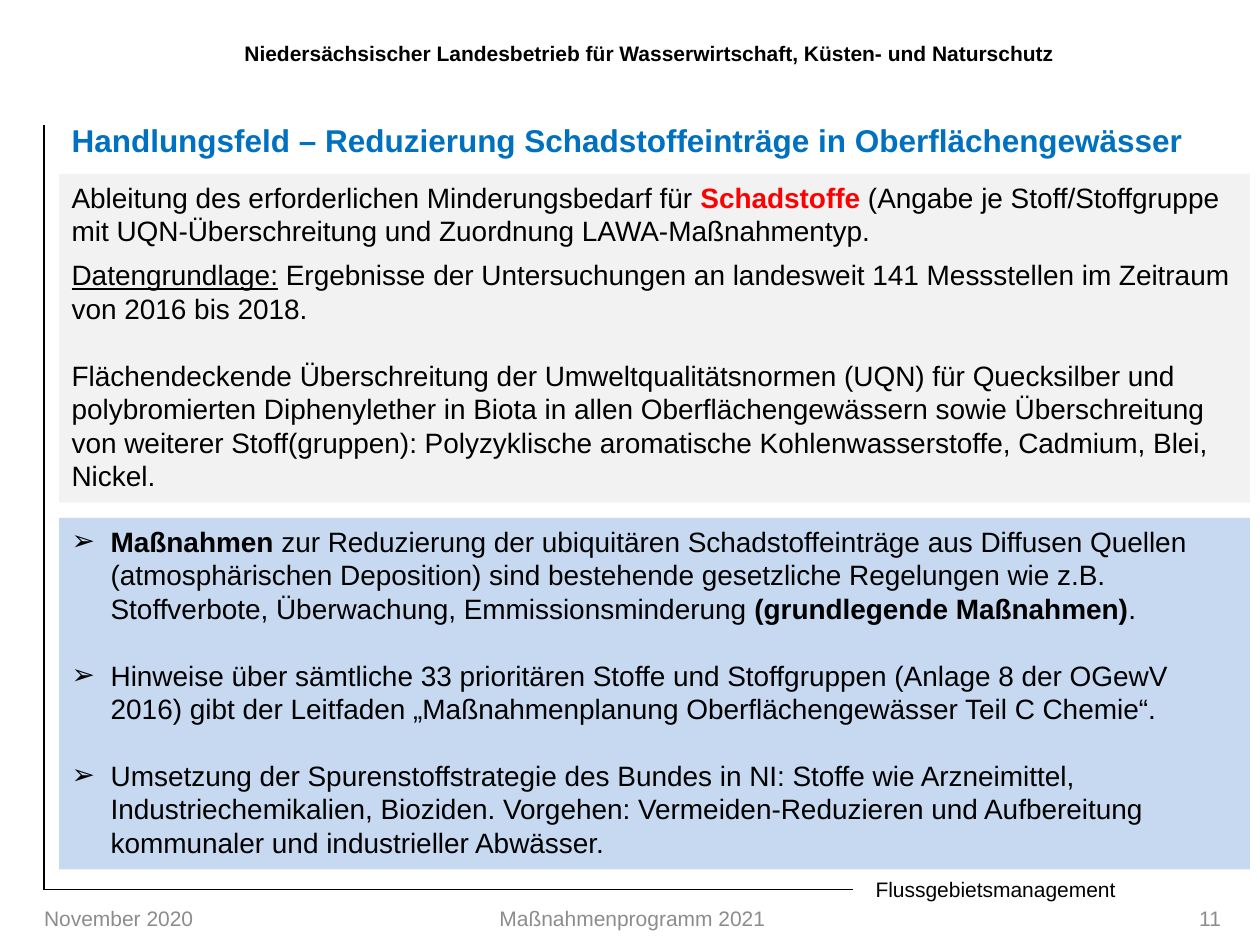
from lxml import etree
from pptx import Presentation
from pptx.dml.color import RGBColor
from pptx.enum.shapes import MSO_CONNECTOR as Connector, MSO_SHAPE as Shape
from pptx.enum.text import MSO_ANCHOR as Anchor, PP_ALIGN as Align
from pptx.oxml.ns import qn
from pptx.util import Inches, Pt

BLACK = RGBColor(0x00, 0x00, 0x00)
GREY = RGBColor(0x8C, 0x8C, 0x8C)
BLUE = RGBColor(0x00, 0x70, 0xC0)
RED = RGBColor(0xFF, 0x00, 0x00)
PALE_GREY = RGBColor(0xF2, 0xF2, 0xF2)
PALE_BLUE = RGBColor(0xC6, 0xD9, 0xF1)

FONT = "Arial"
BODY_SIZE = 16
LINE_GAP = 19  # height of one body line, in points

# Each paragraph is (space after, runs); each run is (text, styles)
FINDINGS = [
    (6, [("Ableitung des erforderlichen Minderungsbedarf für ", {}),
         ("Schadstoffe", {"bold": True, "color": RED}),
         (" (Angabe je Stoff/Stoffgruppe mit UQN-Überschreitung und Zuordnung "
          "LAWA-Maßnahmentyp.", {})]),
    (LINE_GAP, [("Datengrundlage:", {"underline": True}),
                (" ", {"bold": True}),
                ("Ergebnisse der Untersuchungen an landesweit 141 Messstellen im "
                 "Zeitraum von 2016 bis 2018.", {})]),
    (0, [("Flächendeckende Überschreitung der Umweltqualitätsnormen (UQN) für "
          "Quecksilber und polybromierten Diphenylether in Biota in allen "
          "Oberflächengewässern sowie Überschreitung von weiterer Stoff(gruppen): "
          "Polyzyklische aromatische Kohlenwasserstoffe, Cadmium, Blei, Nickel.", {})]),
]
MEASURES = [
    (LINE_GAP, [("Maßnahmen", {"bold": True}),
                (" zur Reduzierung der ubiquitären Schadstoffeinträge aus Diffusen "
                 "Quellen (atmosphärischen Deposition) sind bestehende gesetzliche "
                 "Regelungen wie z.B. Stoffverbote, Überwachung, "
                 "Emmissionsminderung ", {}),
                ("(grundlegende Maßnahmen)", {"bold": True}),
                (".", {})]),
    (LINE_GAP, [("Hinweise über sämtliche 33 prioritären Stoffe und Stoffgruppen "
                 "(Anlage 8 der OGewV 2016) gibt der Leitfaden „Maßnahmenplanung "
                 "Oberflächengewässer Teil C Chemie“.", {})]),
    (0, [("Umsetzung der Spurenstoffstrategie des Bundes in NI: Stoffe wie "
          "Arzneimittel, Industriechemikalien, Bioziden. Vorgehen: "
          "Vermeiden-Reduzieren und Aufbereitung kommunaler und industrieller "
          "Abwässer.", {})]),
]


def add_run(paragraph, text, size, color=BLACK, bold=False, underline=False):
    run = paragraph.add_run()
    run.text = text
    font = run.font
    font.name, font.size, font.bold, font.underline = FONT, Pt(size), bold, underline
    font.color.rgb = color


def add_label(slide, box, text, size=12, color=BLACK, bold=False,
              align=Align.LEFT, anchor=Anchor.TOP, side_inset=0.1):
    frame = slide.shapes.add_textbox(*map(Inches, box)).text_frame
    frame.word_wrap = True
    frame.vertical_anchor = anchor
    frame.margin_left = frame.margin_right = Inches(side_inset)
    paragraph = frame.paragraphs[0]
    paragraph.alignment = align
    add_run(paragraph, text, size, color, bold)


def add_rule(slide, start, end):
    line = slide.shapes.add_connector(
        Connector.STRAIGHT, *map(Inches, start), *map(Inches, end))
    line.line.color.rgb = BLACK
    line.line.width = Pt(0.75)
    etree.SubElement(line._element.spPr, qn("a:effectLst"))


def add_arrow_bullet(paragraph):
    indent = Inches(0.31)
    properties = paragraph._p.get_or_add_pPr()
    properties.set("marL", str(indent))
    properties.set("indent", str(-indent))
    etree.SubElement(properties, qn("a:buFont")).set("typeface", FONT)
    etree.SubElement(properties, qn("a:buChar")).set("char", "➢")


def add_panel(slide, box, fill, content, bulleted=False):
    panel = slide.shapes.add_shape(Shape.RECTANGLE, *map(Inches, box))
    panel.shadow.inherit = False
    panel.fill.solid()
    panel.fill.fore_color.rgb = fill
    panel.line.fill.background()
    frame = panel.text_frame
    frame.word_wrap = True
    frame.vertical_anchor = Anchor.TOP
    for index, (space_after, runs) in enumerate(content):
        paragraph = frame.add_paragraph() if index else frame.paragraphs[0]
        if bulleted:
            add_arrow_bullet(paragraph)
        paragraph.alignment = Align.LEFT
        paragraph.space_after = Pt(space_after)
        for text, styles in runs:
            add_run(paragraph, text, BODY_SIZE, **styles)


def add_frame(slide, left, top, right, bottom):
    # Corner rules with the department name at the end of the lower one
    add_rule(slide, (right, bottom), (left, bottom))
    add_rule(slide, (left, bottom), (left, top))
    add_label(slide, (right + 0.08, bottom - 0.15, 2.21, 0.3), "Flussgebietsmanagement")


def add_footer(slide, left, top, width, height):
    # Date, programme and page number share the same strip
    for text, align in (("November 2020", Align.LEFT),
                        ("Maßnahmenprogramm 2021", Align.CENTER),
                        ("11", Align.RIGHT)):
        part = width / 3
        offset = {Align.LEFT: 0, Align.CENTER: part, Align.RIGHT: 2 * part}[align]
        add_label(slide, (left + offset, top, part, height), text, color=GREY,
                  align=align, anchor=Anchor.MIDDLE, side_inset=0)


def main():
    presentation = Presentation()
    presentation.slide_width, presentation.slide_height = Inches(10), Inches(7.5)
    slide = presentation.slides.add_slide(presentation.slide_layouts[6])

    add_frame(slide, 0.35, 0.99, 6.77, 7.06)
    # Agency name and slide title
    add_label(slide, (1.61, 0.21, 7.09, 0.43),
              "Niedersächsischer Landesbetrieb für Wasserwirtschaft, Küsten- und "
              "Naturschutz", bold=True, align=Align.CENTER, anchor=Anchor.MIDDLE)
    add_label(slide, (0.47, 0.91, 9.49, 0.39),
              "Handlungsfeld – Reduzierung Schadstoffeinträge in Oberflächengewässer",
              size=18, color=BLUE, bold=True)
    # Findings above, measures below
    add_panel(slide, (0.47, 1.38, 9.45, 2.61), PALE_GREY, FINDINGS)
    add_panel(slide, (0.47, 4.11, 9.45, 2.79), PALE_BLUE, MEASURES, bulleted=True)
    add_footer(slide, 0.35, 7.14, 9.34, 0.3)

    presentation.save("out.pptx")


if __name__ == "__main__":
    main()
